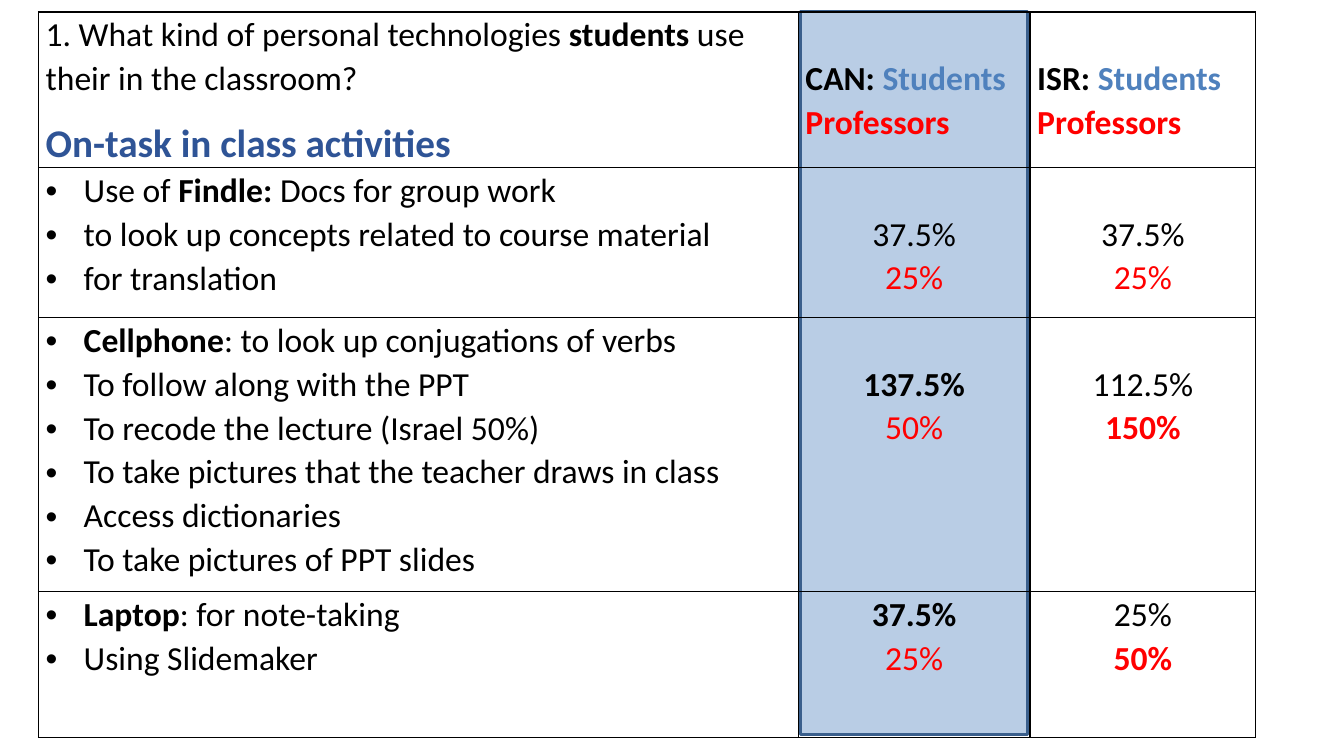
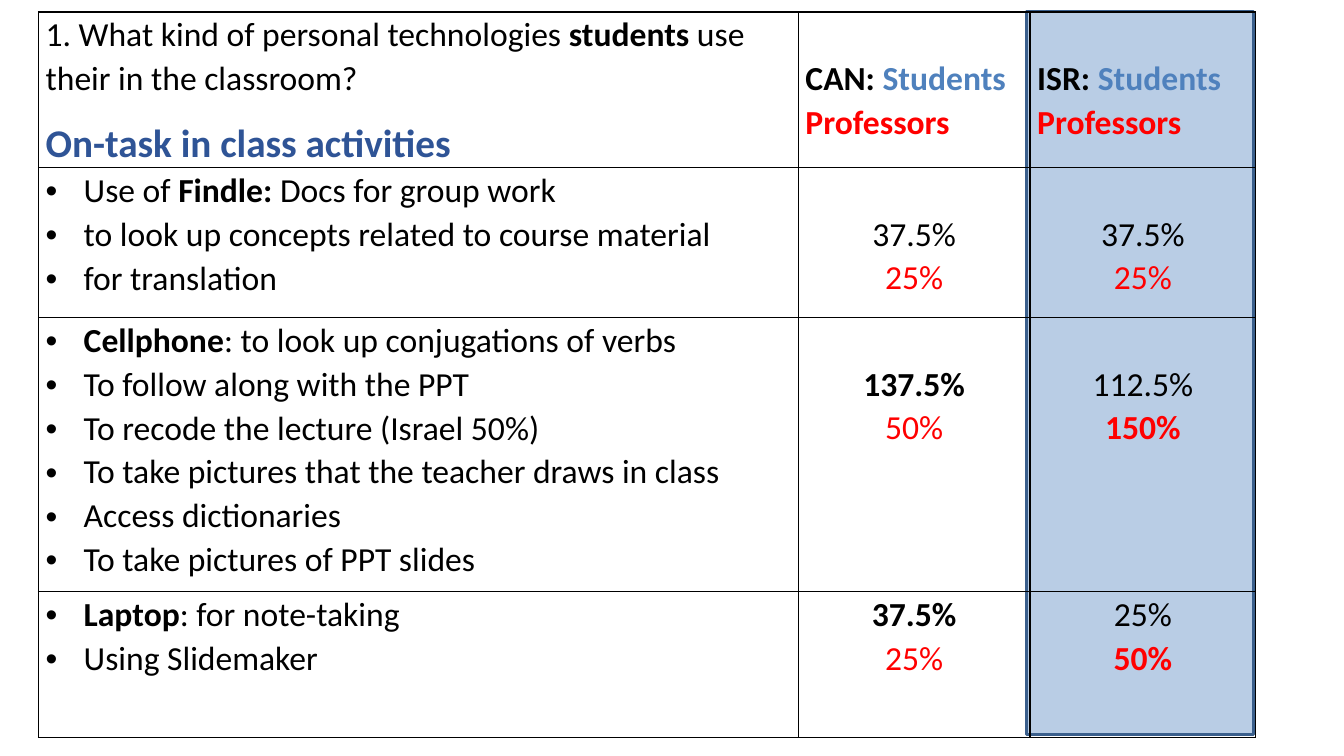
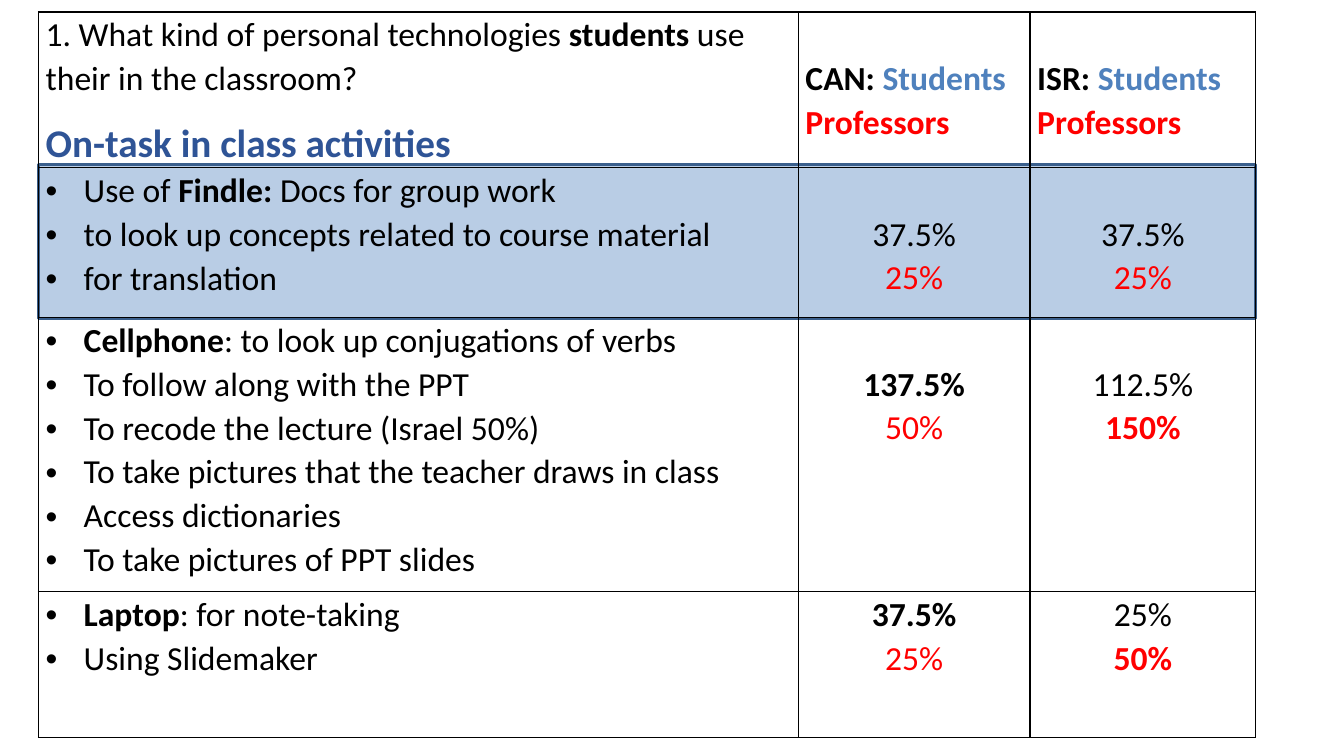
from collections import namedtuple

from lxml.etree import SubElement
from pptx import Presentation
from pptx.dml.color import RGBColor
from pptx.enum.shapes import MSO_SHAPE
from pptx.enum.text import PP_ALIGN
from pptx.oxml.ns import qn
from pptx.util import Cm, Pt

COLOURS = {
    "text": "000000",
    "heading": "2F5496",
    "students": "4F81BD",
    "professors": "FF0000",
    "border": "000000",
    "highlight": "B9CDE5",
    "highlight_edge": "3A5F8C",
}

LEFT, TOP = 0.97, 0.3
COLUMN_WIDTHS = (19.15, 5.84, 5.69)
ROW_HEIGHTS = (3.86, 3.78, 6.91, 3.66)
TABLE_WIDTH, TABLE_HEIGHT = sum(COLUMN_WIDTHS), sum(ROW_HEIGHTS)
ONE_LINE = 1.1

Part = namedtuple("Part", "text colour bold size", defaults=("text", False, 24))

QUESTION = [
    [Part("1. What kind of personal technologies "), Part("students ", bold=True),
     Part("use their in the classroom?")],
    [Part("On-task in class activities", "heading", True, 28)],
]
COUNTRIES = ("CAN: ", "ISR: ")

# Each activity: lines of text parts, then (students, professors) per country
# with the stronger answers in bold, then the gap above the answers.
ACTIVITIES = [
    ([[Part("Use of "), Part("Findle: ", bold=True), Part("Docs for group work")],
      [Part("to look up concepts related to course material")],
      [Part("for translation")]],
     [(("37.5%", False), ("25%", False)), (("37.5%", False), ("25%", False))],
     ONE_LINE),
    ([[Part("Cellphone", bold=True), Part(": to look up conjugations of verbs")],
      [Part("To follow along with the PPT")],
      [Part("To recode the lecture (Israel 50%)")],
      [Part("To take pictures that the teacher draws in class")],
      [Part("Access dictionaries")],
      [Part("To take pictures of PPT slides")]],
     [(("137.5%", True), ("50%", False)), (("112.5%", False), ("150%", True))],
     ONE_LINE),
    ([[Part("Laptop", bold=True), Part(": for note-taking")],
      [Part("Using Slidemaker")]],
     [(("37.5%", True), ("25%", False)), (("25%", False), ("50%", True))],
     0),
]

# Left, top, width and height of the band behind the table on each slide.
HIGHLIGHTS = [
    (20.17, TOP, 5.72, TABLE_HEIGHT),
    (25.88, TOP, 5.72, TABLE_HEIGHT),
    (LEFT, 4.14, TABLE_WIDTH, 3.89),
]


def colour(name):
    return RGBColor.from_string(COLOURS[name])


class SurveyDeck:
    font = "Calibri"
    line_spacing = 1.07
    side_margin = Cm(0.18)

    def __init__(self):
        self.presentation = Presentation()
        self.presentation.slide_width = Cm(33.87)
        self.presentation.slide_height = Cm(19.05)
        self.slide = None

    def add_slide(self):
        self.slide = self.presentation.slides.add_slide(self.presentation.slide_layouts[6])

    def add_highlight(self, *box):
        band = self.slide.shapes.add_shape(MSO_SHAPE.RECTANGLE, *map(Cm, box))
        band.shadow.inherit = False
        band.fill.solid()
        band.fill.fore_color.rgb = colour("highlight")
        band.line.color.rgb = colour("highlight_edge")
        band.line.width = Pt(2)

    def add_results_table(self):
        table = self.slide.shapes.add_table(
            len(ROW_HEIGHTS), len(COLUMN_WIDTHS),
            Cm(LEFT), Cm(TOP), Cm(TABLE_WIDTH), Cm(TABLE_HEIGHT)).table
        table.first_row = table.horz_banding = False
        for column, width in zip(table.columns, COLUMN_WIDTHS):
            column.width = Cm(width)
        for row, height in zip(table.rows, ROW_HEIGHTS):
            row.height = Cm(height)

        self.fill_cell(table.cell(0, 0), QUESTION)
        table.cell(0, 0).text_frame.paragraphs[1].space_before = Pt(12)
        for col, country in enumerate(COUNTRIES, 1):
            groups = [[Part(country, bold=True), Part("Students", "students", True)],
                      [Part("Professors", "professors", True)]]
            self.fill_cell(table.cell(0, col), groups, gap_above=ONE_LINE)

        for row, (uses, answers, gap) in enumerate(ACTIVITIES, 1):
            self.fill_cell(table.cell(row, 0), uses, bulleted=True)
            for col, (students, professors) in enumerate(answers, 1):
                shares = [[Part(students[0], "text", students[1])],
                          [Part(professors[0], "professors", professors[1])]]
                self.fill_cell(table.cell(row, col), shares, PP_ALIGN.CENTER, gap)

    def fill_cell(self, cell, lines, align=PP_ALIGN.LEFT, gap_above=0, bulleted=False):
        cell.margin_left = cell.margin_right = self.side_margin
        cell.margin_top, cell.margin_bottom = Cm(gap_above), 0
        self.draw_borders(cell)
        cell.fill.background()
        frame = cell.text_frame
        for index, parts in enumerate(lines):
            paragraph = frame.add_paragraph() if index else frame.paragraphs[0]
            paragraph.alignment = align
            paragraph.line_spacing = self.line_spacing
            if bulleted:
                self.add_bullet(paragraph)
            for part in parts:
                run = paragraph.add_run()
                run.text = part.text
                run.font.name = self.font
                run.font.size = Pt(part.size)
                run.font.bold = part.bold
                run.font.color.rgb = colour(part.colour)

    @staticmethod
    def draw_borders(cell):
        properties = cell._tc.get_or_add_tcPr()
        for side in ("lnL", "lnR", "lnT", "lnB"):
            border = SubElement(properties, qn(f"a:{side}"), w=str(Pt(1)))
            solid = SubElement(border, qn("a:solidFill"))
            SubElement(solid, qn("a:srgbClr"), val=COLOURS["border"])

    @staticmethod
    def add_bullet(paragraph):
        properties = paragraph._p.get_or_add_pPr()
        indent = Cm(0.96)
        properties.set("marL", str(indent))
        properties.set("indent", str(-indent))
        SubElement(properties, qn("a:buFont"), typeface="Arial")
        SubElement(properties, qn("a:buChar"), char="•")


def main():
    deck = SurveyDeck()
    for box in HIGHLIGHTS:
        deck.add_slide()
        deck.add_highlight(*box)
        deck.add_results_table()
    deck.presentation.save("out.pptx")


if __name__ == "__main__":
    main()
